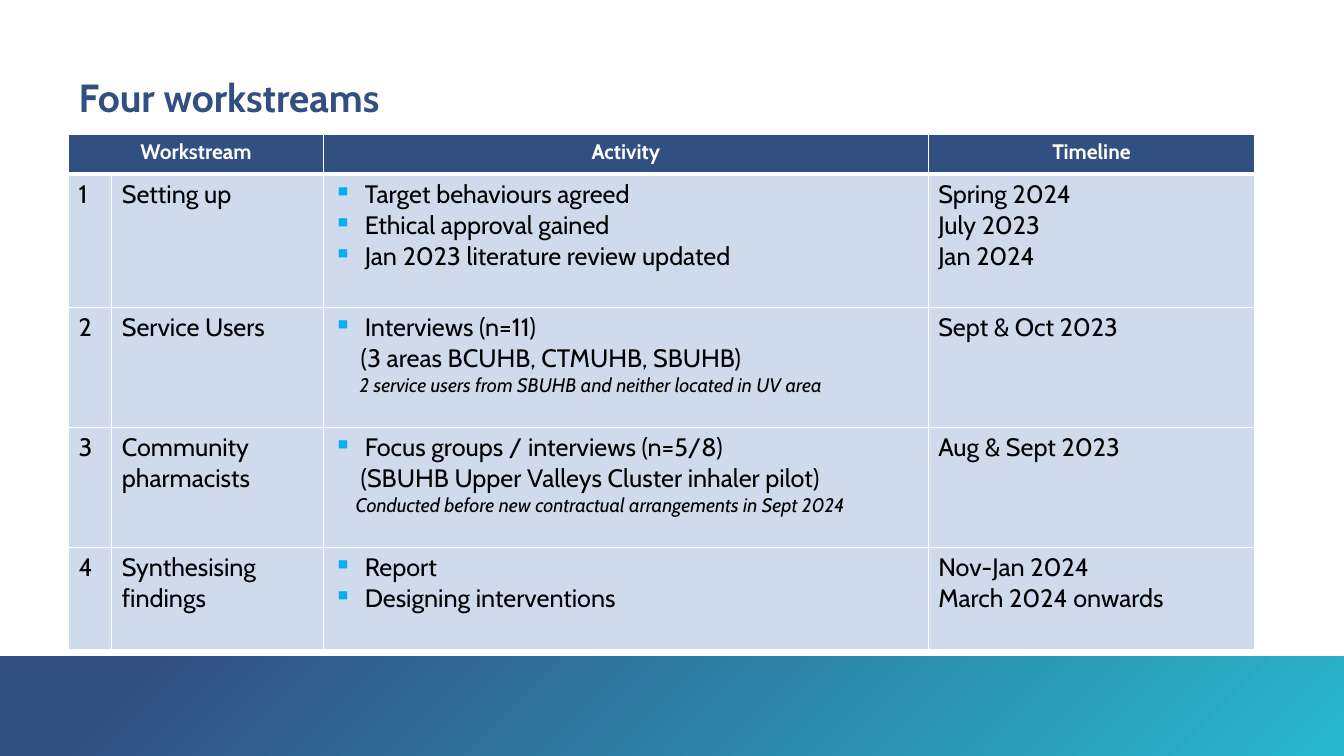
from dataclasses import dataclass

from lxml import etree
from pptx import Presentation
from pptx.dml.color import RGBColor
from pptx.enum.shapes import MSO_SHAPE
from pptx.enum.text import MSO_ANCHOR, MSO_AUTO_SIZE, PP_ALIGN
from pptx.oxml.ns import qn
from pptx.util import Inches, Pt

RECT = MSO_SHAPE.RECTANGLE
TOP = MSO_ANCHOR.TOP
FIXED = MSO_AUTO_SIZE.NONE
LEFT, MID = PP_ALIGN.LEFT, PP_ALIGN.CENTER

FONT = "Cabin"
HUES = {
    "navy": "324F82",
    "teal": "28B8CE",
    "pale": "CFDAED",
    "sky": "00B0F0",
    "white": "FFFFFF",
    "black": "000000",
}
WIDE, HIGH = Inches(13.333), Inches(7.5)
HANG = 0.31

# Column widths and row heights, in percent of the slide
COLS = [3.22, 15.75, 45, 24.3]
ROWS = [5.33, 17.6, 15.87, 15.87, 13.47]


@dataclass
class Line:
    text: str
    indent: float = 0
    bullet: bool = False
    size: float = 18
    italic: bool = False


@dataclass
class Stream:
    name: str
    tasks: list[Line]
    dates: list[Line]


def point(text: str) -> Line:
    return Line(text, HANG, True)


def note(text: str, indent: float) -> Line:
    return Line(text, indent, size=14, italic=True)


HEADS = {0: "Workstream", 2: "Activity", 3: "Timeline"}
STREAMS = [
    Stream(
        "Setting up",
        [point("Target behaviours agreed"),
         point("Ethical approval gained"),
         point("Jan 2023 literature review updated")],
        [Line("Spring 2024"), Line("July 2023"), Line("Jan 2024")],
    ),
    Stream(
        "Service Users",
        [point("Interviews (n=11)"),
         Line("(3 areas BCUHB, CTMUHB, SBUHB)", 0.27),
         note("2 service users from SBUHB and neither located in UV area", 0.26)],
        [Line("Sept & Oct 2023")],
    ),
    Stream(
        "Community pharmacists",
        [point("Focus groups / interviews (n=5/8)"),
         Line("(SBUHB Upper Valleys Cluster inhaler pilot)", 0.27),
         note("Conducted before new contractual arrangements in Sept 2024", 0.22)],
        [Line("Aug & Sept 2023")],
    ),
    Stream(
        "Synthesising findings",
        [point("Report"), point("Designing interventions")],
        [Line("Nov-Jan 2024"), Line("March 2024 onwards")],
    ),
]


def across(share: float) -> int:
    return round(WIDE * share / 100)


def down(share: float) -> int:
    return round(HIGH * share / 100)


def hue(name: str) -> RGBColor:
    return RGBColor.from_string(HUES[name])


def mark(para) -> None:
    """Give a paragraph a square bullet."""
    props = para._p.get_or_add_pPr()
    tint = etree.SubElement(props, qn("a:buClr"))
    etree.SubElement(tint, qn("a:srgbClr"), val=HUES["sky"])
    etree.SubElement(props, qn("a:buChar"), char="▪")


def write(frame, lines: list[Line], *, color: str = "black", bold: bool = False,
          align=LEFT, space: float = 1) -> None:
    for k, line in enumerate(lines):
        para = frame.paragraphs[0] if k == 0 else frame.add_paragraph()
        para.alignment = align
        para.line_spacing = space
        para.space_before = Pt(0)
        props = para._p.get_or_add_pPr()
        props.set("marL", str(Inches(line.indent)))
        props.set("indent", str(-Inches(line.indent) if line.bullet else 0))
        if line.bullet:
            mark(para)
        run = para.add_run()
        run.text = line.text
        font = run.font
        font.name, font.size = FONT, Pt(line.size)
        font.bold, font.italic = bold, line.italic
        font.color.rgb = hue(color)


def edge(cell, side: str, width: float) -> None:
    props = cell._tc.get_or_add_tcPr()
    rule = etree.SubElement(props, qn(f"a:ln{side}"), w=str(Pt(width)))
    solid = etree.SubElement(rule, qn("a:solidFill"))
    etree.SubElement(solid, qn("a:srgbClr"), val=HUES["white"])


def style(cell, row: int) -> None:
    for side in "LRTB":
        thick = (row, side) in ((0, "B"), (1, "T"))
        edge(cell, side, 3 if thick else 1)
    cell.fill.solid()
    cell.fill.fore_color.rgb = hue("pale" if row else "navy")


def band(slide) -> None:
    shape = slide.shapes.add_shape(RECT, 0, down(86.8), WIDE, down(13.2))
    shape.shadow.inherit = False
    shape.line.fill.background()
    shape.fill.gradient()
    shape.fill.gradient_angle = 315
    stops = zip(shape.fill.gradient_stops, ("navy", "teal"), (0.1, 1))
    for stop, name, place in stops:
        stop.color.rgb = hue(name)
        stop.position = place


def title(slide) -> None:
    head = slide.shapes.title
    head.left, head.top = across(5.85), down(10.4)
    head.width, head.height = across(88.28), down(5.73)
    frame = head.text_frame
    frame.margin_left = frame.margin_right = 0
    frame.margin_top = frame.margin_bottom = 0
    frame.vertical_anchor = TOP
    frame.auto_size = FIXED
    frame.word_wrap = True
    write(frame, [Line("Four workstreams", size=28)],
          color="navy", bold=True, space=0.9)


def plan(slide) -> None:
    table = slide.shapes.add_table(
        len(ROWS), len(COLS), across(5.1), down(17.73),
        across(sum(COLS)), down(sum(ROWS))).table
    for col, share in zip(table.columns, COLS):
        col.width = across(share)
    for row, share in zip(table.rows, ROWS):
        row.height = down(share)
    for r in range(len(ROWS)):
        for c in range(len(COLS)):
            style(table.cell(r, c), r)

    # Header row
    table.cell(0, 0).merge(table.cell(0, 1))
    for c, text in HEADS.items():
        write(table.cell(0, c).text_frame, [Line(text, size=15)],
              color="white", bold=True, align=MID)

    # One row per workstream
    for r, item in enumerate(STREAMS, 1):
        parts = [[Line(str(r))], [Line(item.name)], item.tasks, item.dates]
        for c, lines in enumerate(parts):
            write(table.cell(r, c).text_frame, lines)


def main() -> None:
    deck = Presentation()
    deck.slide_width, deck.slide_height = WIDE, HIGH
    slide = deck.slides.add_slide(deck.slide_layouts[5])
    band(slide)
    title(slide)
    plan(slide)
    deck.save("out.pptx")


if __name__ == "__main__":
    main()
